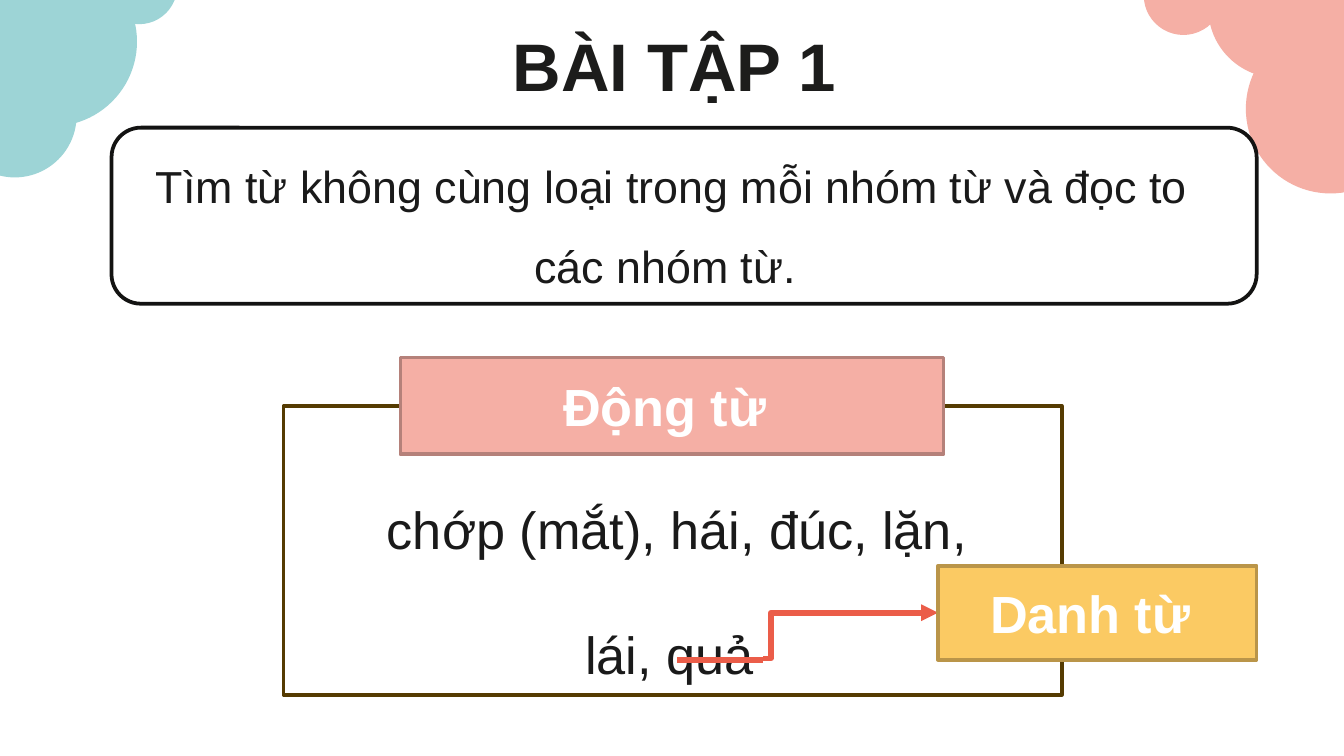
from lxml import etree
from pptx import Presentation
from pptx.dml.color import RGBColor
from pptx.enum import shapes, text
from pptx.oxml import ns
from pptx.util import Inches, Pt

TEAL = RGBColor(0x9D, 0xD4, 0xD6)
PINK = RGBColor(0xF5, 0xAF, 0xA5)
ROSE = RGBColor(0xB5, 0x81, 0x7A)
GOLD = RGBColor(0xFB, 0xCA, 0x63)
OCHRE = RGBColor(0xBA, 0x95, 0x49)
BROWN = RGBColor(0x55, 0x3B, 0x02)
RED = RGBColor(0xEB, 0x5D, 0x49)
BLACK = RGBColor(0x13, 0x13, 0x12)
INK = RGBColor(0x1A, 0x1A, 0x1A)
TITLE = RGBColor(0x1C, 0x1C, 0x1B)
WHITE = RGBColor(0xFF, 0xFF, 0xFF)

OVAL = shapes.MSO_SHAPE.OVAL
RECT = shapes.MSO_SHAPE.RECTANGLE
ROUND = shapes.MSO_SHAPE.ROUNDED_RECTANGLE

# Corner clouds: colour, then left, top, diameter of each puff
CLOUDS = [
    (TEAL, [(-0.24, -0.32, 1.26), (-0.35, 0.4, 0.92), (0.75, -0.39, 0.57)]),
    (PINK, [(8.99, -0.46, 1.04), (9.27, 0.18, 1.26), (8.51, -0.33, 0.59)]),
]

HEAD = {"size": Pt(36), "bold": True}
TASK = {"size": Pt(24)}
WORDS = {"size": Pt(28)}
LABEL = {"size": Pt(28), "bold": True}

# Text boxes: place, words, colour, font, line spacing
TITLE_BOX = ((2.81, 0.13, 4.56, 0.71), "BÀI TẬP 1 ", TITLE, HEAD, 1)
TASK_BOX = ((0.83, 0.93, 8.33, 1.24),
            "Tìm từ không cùng loại trong mỗi nhóm từ và đọc to các nhóm từ. ",
            INK, TASK, 1.5)
WORD_BOX = ((2.55, 3.18, 4.97, 1.99), "chớp (mắt), hái, đúc, lặn, lái, quả ",
            INK, WORDS, 2)

# Frames: preset, place, fill, border
TASK_FRAME = (ROUND, (0.83, 0.95, 8.52, 1.31), WHITE, BLACK)
WORD_FRAME = (RECT, (2.11, 3.02, 5.79, 2.15), WHITE, BROWN)
VERB_TAG = (RECT, (2.98, 2.66, 4.04, 0.72), PINK, ROSE)
NOUN_TAG = (RECT, (6.98, 4.21, 2.37, 0.7), GOLD, OCHRE)

STRIKE = ((5.04, 4.91), (5.68, 4.91))
ARROW = ((5.68, 4.9), (6.98, 4.56))
BEND = 0.043

prs = Presentation()
prs.slide_width = Inches(10)
prs.slide_height = prs.slide_width * 9 // 16
slide = prs.slides.add_slide(prs.slide_layouts[6])


def write(frame, words, color, font, gap=1):
    frame.word_wrap = True
    para = frame.paragraphs[0]
    para.alignment = text.PP_ALIGN.CENTER
    para.line_spacing = gap
    run = para.add_run()
    run.text = words
    run.font.color.rgb = color
    for key, value in {"name": "Arial", **font}.items():
        setattr(run.font, key, value)


def add_box(place, words, color, font, gap):
    box = slide.shapes.add_textbox(*map(Inches, place))
    write(box.text_frame, words, color, font, gap)
    box.text_frame.auto_size = text.MSO_AUTO_SIZE.SHAPE_TO_FIT_TEXT


def add_form(preset, place, fill, edge=None):
    form = slide.shapes.add_shape(preset, *map(Inches, place))
    form.shadow.inherit = False
    form.fill.solid()
    form.fill.fore_color.rgb = fill
    if edge is None:
        form.line.fill.background()
    else:
        form.line.color.rgb = edge
        form.line.width = Pt(2)
    return form


def add_tag(form, words):
    frame = add_form(*form).text_frame
    frame.vertical_anchor = text.MSO_ANCHOR.MIDDLE
    write(frame, words, WHITE, LABEL)


def add_line(kind, start, end):
    line = slide.shapes.add_connector(kind, *map(Inches, start + end))
    line.line.color.rgb = RED
    line.line.width = Pt(3)
    etree.SubElement(line._element.spPr, ns.qn("a:effectLst"))
    return line


for color, puffs in CLOUDS:
    for left, top, size in puffs:
        add_form(OVAL, (left, top, size, size), color)

add_box(*TITLE_BOX)
add_form(*TASK_FRAME)
add_box(*TASK_BOX)
add_form(*WORD_FRAME)
add_tag(VERB_TAG, "Động từ ")
add_box(*WORD_BOX)

add_line(shapes.MSO_CONNECTOR.STRAIGHT, *STRIKE)
arrow = add_line(shapes.MSO_CONNECTOR.ELBOW, *ARROW)
etree.SubElement(arrow.line._get_or_add_ln(), ns.qn("a:tailEnd"), type="triangle")
bends = arrow._element.spPr.find(".//" + ns.qn("a:avLst"))
etree.SubElement(bends, ns.qn("a:gd"), name="adj1", fmla=f"val {round(BEND * 100000)}")

add_tag(NOUN_TAG, "Danh từ ")

prs.save("out.pptx")
